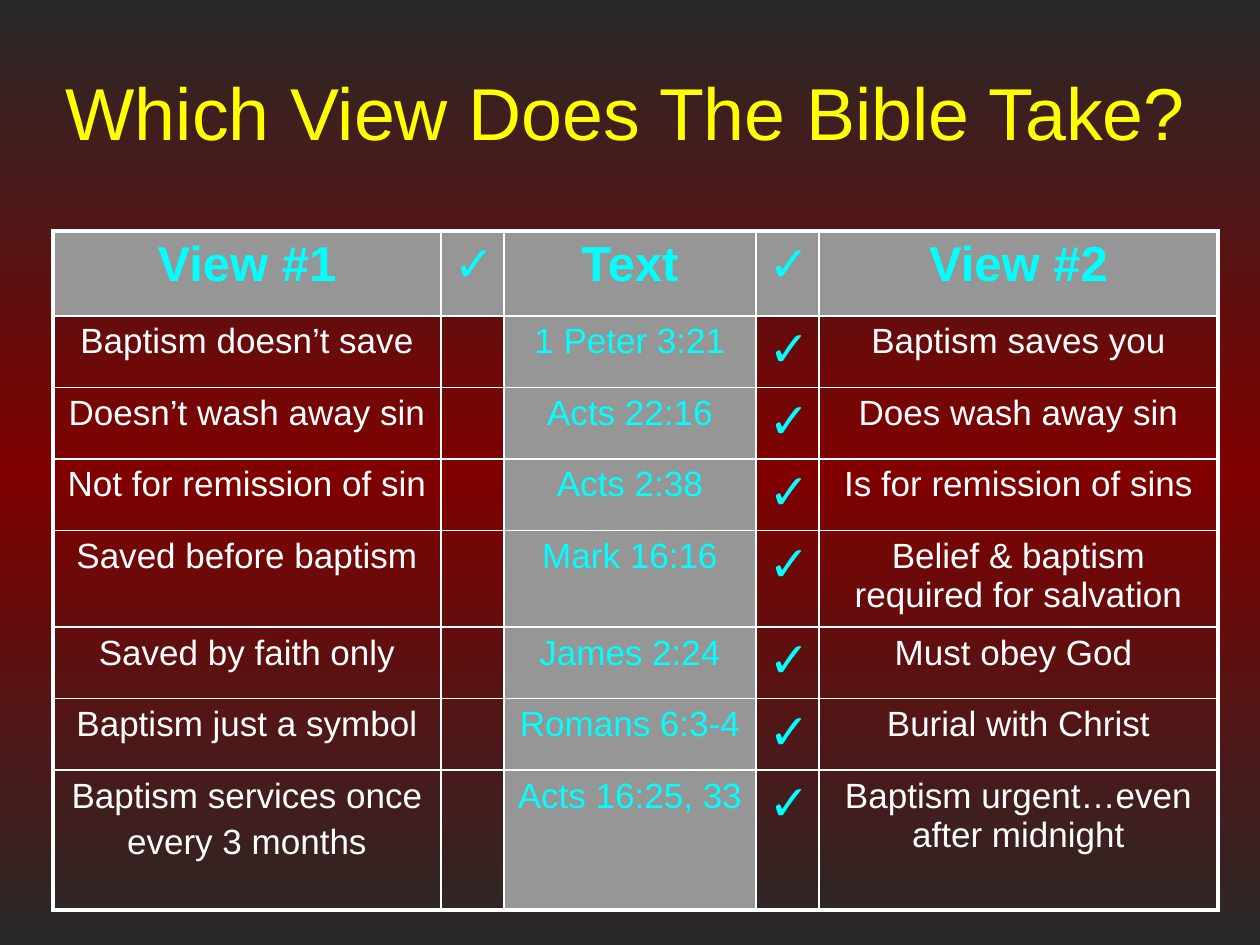
import copy

from lxml import etree
from pptx import Presentation, util as u
from pptx.dml.color import RGBColor
from pptx.enum import text
from pptx.oxml.ns import qn

# Content
TITLE = "Which View Does The Bible Take? "
CHECK = "✓"
HEADER = ("View #1", CHECK, "Text", CHECK, "View #2")
VIEWS = [  # view 1, text, view 2
    ("Baptism doesn’t save", "1 Peter 3:21", "Baptism saves you"),
    ("Doesn’t wash away sin", "Acts 22:16", "Does wash away sin"),
    ("Not for remission of sin", "Acts 2:38", "Is for remission of sins"),
    ("Saved before baptism", "Mark 16:16", "Belief & baptism required for salvation"),
    ("Saved by faith only", "James 2:24", "Must obey God "),
    ("Baptism just a symbol", "Romans 6:3-4", "Burial with Christ"),
    ("Baptism services once\nevery 3 months", "Acts 16:25, 33",
     "Baptism urgent…even after midnight"),
]
ROWS = [HEADER] + [(v1, "", ref, CHECK, v2) for v1, ref, v2 in VIEWS]

# Look and measures in px
COLORS = {"edge": "292929", "middle": "800000", "title": "FFFF00",
          "accent": "00FFFF", "body": "FFFFFF", "line": "FFFFFF", "gray": "969696"}
FONT = "Arial"
COL_W = [388, 63, 252, 63, 399]
ROW_H = [85] + [71] * 6 + [140]
THIN, THICK = 1, 2.25
TEXT_COL = 2


def px(n):
    return u.Emu(round(n * 914400 / 126))


def rgb(name):
    return RGBColor.from_string(COLORS[name])


def write(p, words, size, color, bold=False):
    p.alignment = text.PP_ALIGN.CENTER
    r = p.add_run()
    r.text = words
    r.font.name, r.font.size, r.font.bold = FONT, u.Pt(size), bold
    r.font.color.rgb = rgb(color)


def set_borders(cell, widths):
    tcPr = cell._tc.get_or_add_tcPr()
    for side, width in zip("LRTB", widths):
        ln = etree.SubElement(tcPr, qn(f"a:ln{side}"), w=str(u.Pt(width)))
        fill = etree.SubElement(ln, qn("a:solidFill"))
        etree.SubElement(fill, qn("a:srgbClr"), val=COLORS["line"])


prs = Presentation()
prs.slide_width, prs.slide_height = px(1260), px(945)
s = prs.slides.add_slide(prs.slide_layouts[6])

# Background: dark edges, red middle
bg = s.background.fill
bg.gradient()
bg.gradient_angle = 270
stops = s.element.find(".//" + qn("a:gsLst"))
stops.insert(1, copy.deepcopy(stops[0]))
for stop, pos, color in zip(bg.gradient_stops, (0, 0.5, 1), ("edge", "middle", "edge")):
    stop.position = pos
    stop.color.rgb = rgb(color)

# Title
tf = s.shapes.add_textbox(px(32), px(32), px(1207), px(158)).text_frame
tf.word_wrap = True
tf.vertical_anchor = text.MSO_ANCHOR.MIDDLE
write(tf.paragraphs[0], TITLE, 42, "title")

# Table
tbl = s.shapes.add_table(len(ROWS), len(COL_W), px(53), px(231),
                         px(sum(COL_W)), px(sum(ROW_H))).table
tbl.first_row = tbl.horz_banding = False
for col, w in zip(tbl.columns, COL_W):
    col.width = px(w)
for row, h in zip(tbl.rows, ROW_H):
    row.height = px(h)

last_row, last_col = len(ROWS) - 1, len(COL_W) - 1
for i, row in enumerate(ROWS):
    for j, words in enumerate(row):
        cell = tbl.cell(i, j)
        outer = (j == 0, j == last_col, i == 0, i == last_row)
        set_borders(cell, [THICK if edge else THIN for edge in outer])
        if i == 0 or j == TEXT_COL:
            cell.fill.solid()
            cell.fill.fore_color.rgb = rgb("gray")
        else:
            cell.fill.background()
        if not words:
            continue
        size = 28 if i == 0 or words == CHECK else 20
        color = "body" if i and j in (0, last_col) else "accent"
        tf = cell.text_frame
        for k, line in enumerate(words.split("\n")):
            p = tf.add_paragraph() if k else tf.paragraphs[0]
            p.space_before = u.Pt(size * 0.2)
            write(p, line, size, color, bold=i == 0 and words != CHECK)

prs.save("out.pptx")
